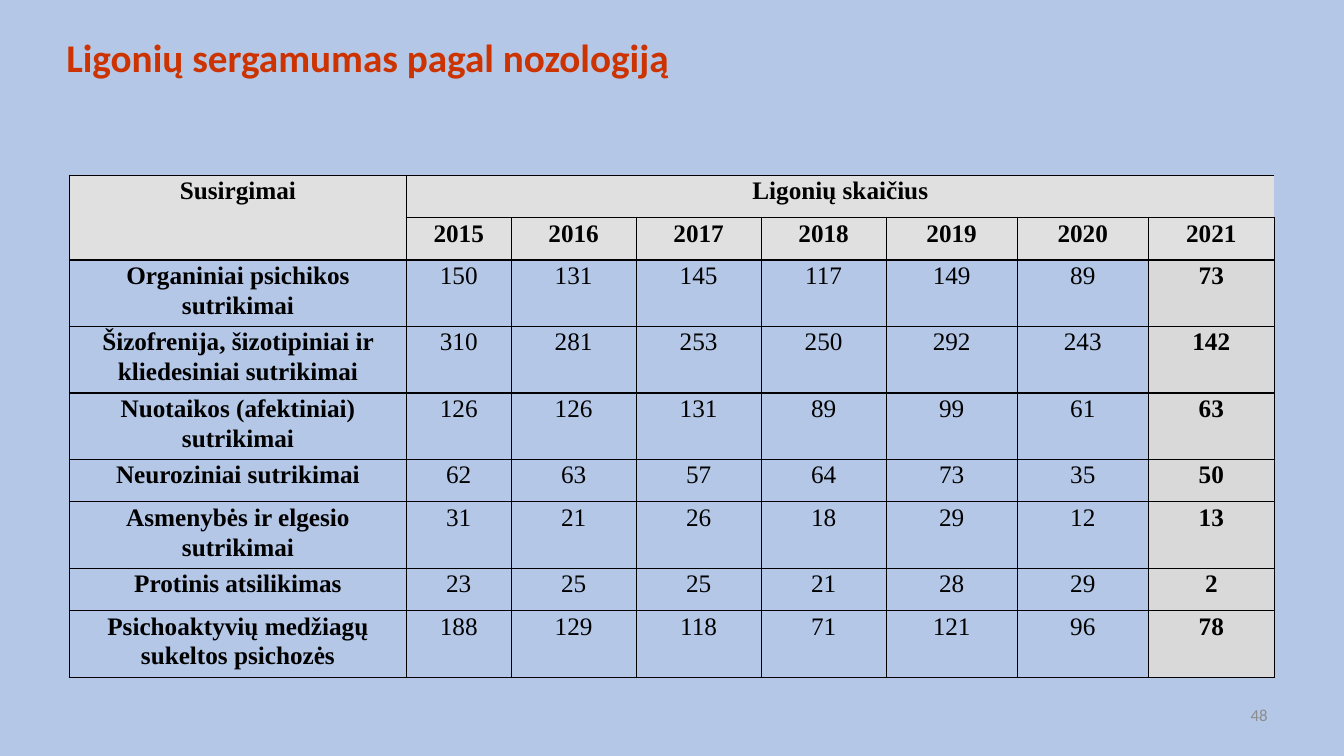
from lxml import etree
from pptx import Presentation, util as u
from pptx.dml.color import RGBColor
from pptx.enum import text
from pptx.oxml import ns

COLORS = {
    "background": "B4C7E7", "title": "CC3300", "ink": "000000",
    "header": "E0E0E0", "latest": "D9D9D9", "number": "8C8C8C",
}
YEARS = range(2015, 2022)
PATIENTS = {
    "Organiniai psichikos sutrikimai": [150, 131, 145, 117, 149, 89, 73],
    "Šizofrenija, šizotipiniai ir kliedesiniai sutrikimai": [310, 281, 253, 250, 292, 243, 142],
    "Nuotaikos (afektiniai) sutrikimai": [126, 126, 131, 89, 99, 61, 63],
    "Neuroziniai sutrikimai": [62, 63, 57, 64, 73, 35, 50],
    "Asmenybės ir elgesio sutrikimai": [31, 21, 26, 18, 29, 12, 13],
    "Protinis atsilikimas": [23, 25, 25, 21, 28, 29, 2],
    "Psichoaktyvių medžiagų sukeltos psichozės": [188, 129, 118, 71, 121, 96, 78],
}
COLUMN_WIDTHS = [3.34, 1.04, 1.24, 1.24, 1.24, 1.3, 1.3, 1.25]
SHORT_ROW, TALL_ROW = 0.42, 0.66
ONE_LINE = {"Neuroziniai sutrikimai", "Protinis atsilikimas"}


def color(name):
    return RGBColor.from_string(COLORS[name])


def write(frame, words, ink, paragraph_format, font_format):
    para = frame.paragraphs[0]
    for name, value in paragraph_format.items():
        setattr(para, name, value)
    span = para.add_run()
    span.text = words
    for name, value in font_format.items():
        setattr(span.font, name, value)
    span.font.color.rgb = color(ink)


def add_text(page, box, words, ink, paragraph_format, font_format):
    frame = page.shapes.add_textbox(*map(u.Inches, box)).text_frame
    frame.word_wrap = True
    frame.vertical_anchor = text.MSO_ANCHOR.MIDDLE
    write(frame, words, ink, paragraph_format, {"name": "Calibri", **font_format})


def add_borders(cell, open_right):
    properties = cell._tc.get_or_add_tcPr()
    for place, side in enumerate("LRTB"):
        line = etree.Element(ns.qn(f"a:ln{side}"), w=str(u.Pt(1)))
        if side == "R" and open_right:
            etree.SubElement(line, ns.qn("a:noFill"))
        else:
            fill = etree.SubElement(line, ns.qn("a:solidFill"))
            etree.SubElement(fill, ns.qn("a:srgbClr"), val=COLORS["ink"])
        properties.insert(place, line)


def fill_cell(cell, words, row, column):
    last = len(YEARS)
    for side in ("left", "right", "top", "bottom"):
        setattr(cell, f"margin_{side}", 0)
    if row < 2 or column == last:
        cell.fill.solid()
        cell.fill.fore_color.rgb = color("header" if row < 2 else "latest")
    else:
        cell.fill.background()
    add_borders(cell, row == 0 and column > 0)
    if words:
        write(cell.text_frame, words, "ink",
              {"alignment": text.PP_ALIGN.CENTER, "line_spacing": 1.07, "space_after": u.Pt(8)},
              {"name": "Times New Roman", "size": u.Pt(18),
               "bold": row < 2 or column in (0, last)})


def add_patient_table(page, box):
    rows = [["Susirgimai", "Ligonių skaičius"] + [""] * (len(YEARS) - 1), ["", *YEARS]]
    rows += [[disorder, *counts] for disorder, counts in PATIENTS.items()]
    heights = [SHORT_ROW] * 2 + [SHORT_ROW if name in ONE_LINE else TALL_ROW for name in PATIENTS]
    table = page.shapes.add_table(len(rows), len(COLUMN_WIDTHS), *map(u.Inches, box)).table
    table.first_row = table.horz_banding = False
    for column, width in zip(table.columns, COLUMN_WIDTHS):
        column.width = u.Inches(width)
    for row, height in zip(table.rows, heights):
        row.height = u.Inches(height)
    table.cell(0, 0).merge(table.cell(1, 0))
    table.cell(0, 1).merge(table.cell(0, len(YEARS)))
    for row, values in enumerate(rows):
        for column, value in enumerate(values):
            fill_cell(table.cell(row, column), str(value), row, column)


def main():
    deck = Presentation()
    deck.slide_width, deck.slide_height = u.Inches(13.33), u.Inches(7.5)
    page = deck.slides.add_slide(deck.slide_layouts[6])
    page.background.fill.solid()
    page.background.fill.fore_color.rgb = color("background")
    add_text(page, (0.56, 0.41, 10.37, 0.37), "Ligonių sergamumas pagal nozologiją",
             "title", {"line_spacing": 0.9}, {"size": u.Pt(28), "bold": True})
    add_patient_table(page, (0.69, 1.74, 11.97, 4.98))
    add_text(page, (9.56, 6.83, 3.11, 0.52), "48",
             "number", {"alignment": text.PP_ALIGN.RIGHT}, {"size": u.Pt(12)})
    deck.save("out.pptx")


if __name__ == "__main__":
    main()
